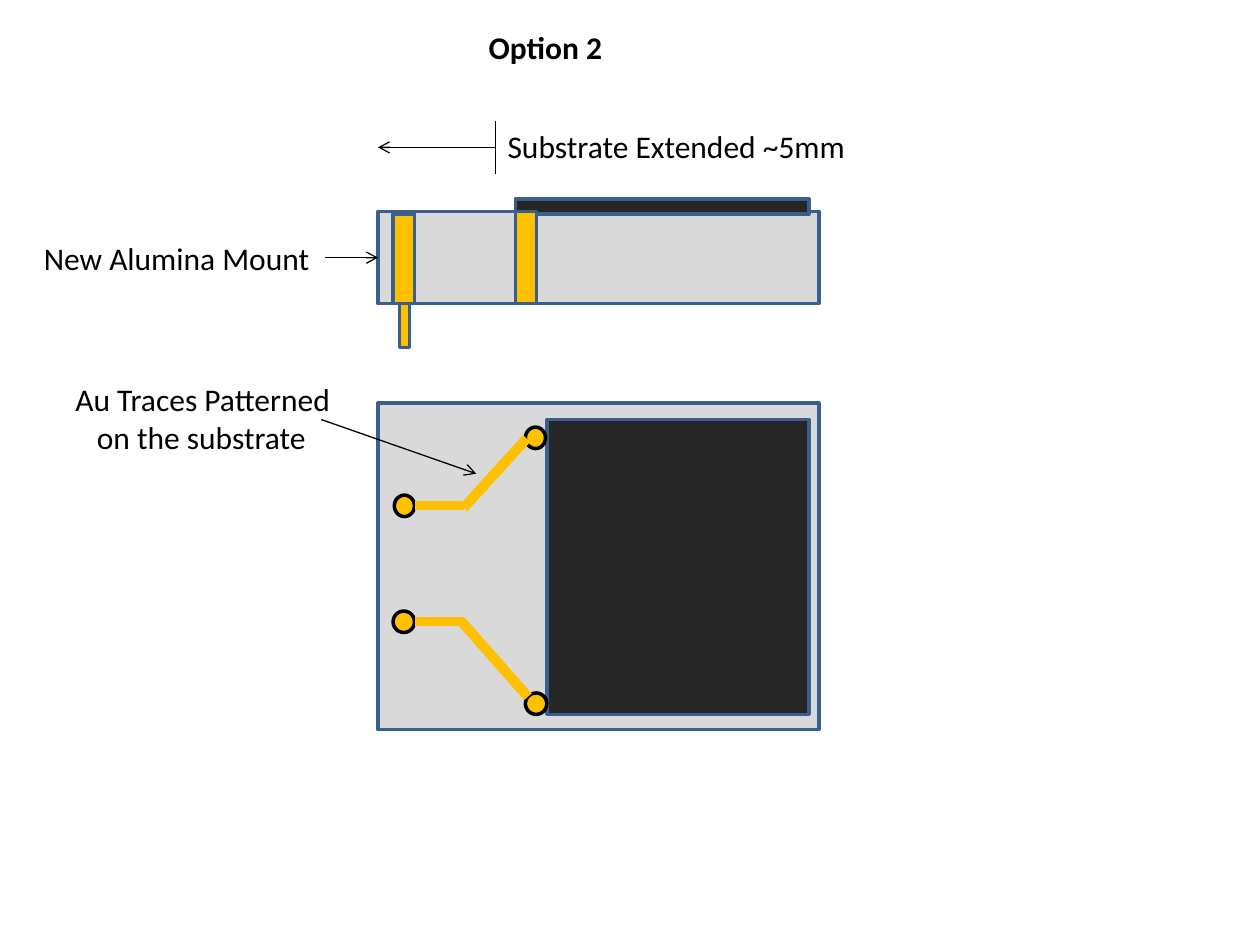
from pptx import Presentation
from pptx.dml.color import RGBColor
from pptx.enum.shapes import MSO_CONNECTOR, MSO_SHAPE
from pptx.enum.text import MSO_AUTO_SIZE, PP_ALIGN
from pptx.oxml.ns import qn
from pptx.util import Inches, Pt
from lxml import etree

RECTANGLE = MSO_SHAPE.RECTANGLE
OVAL = MSO_SHAPE.OVAL
STRAIGHT = MSO_CONNECTOR.STRAIGHT
LEFT = PP_ALIGN.LEFT
COLORS = {
    "alumina": "D9D9D9",
    "chip": "262626",
    "gold": "FFC000",
    "outline": "3A5F8C",
    "black": "000000",
}

presentation = Presentation()
presentation.slide_width = Inches(10)
presentation.slide_height = Inches(7.5)
slide = presentation.slides.add_slide(presentation.slide_layouts[6])


def add_text(text, left, top, width, height=0.4, bold=False):
    box = slide.shapes.add_textbox(
        Inches(left), Inches(top), Inches(width), Inches(height))
    frame = box.text_frame
    frame.word_wrap = False
    frame.auto_size = MSO_AUTO_SIZE.SHAPE_TO_FIT_TEXT
    frame.text = text
    for paragraph in frame.paragraphs:
        paragraph.alignment = LEFT
        font = paragraph.runs[0].font
        font.name = "Calibri"
        font.size = Pt(18)
        font.bold = bold
        font.color.rgb = RGBColor.from_string(COLORS["black"])
    return box


def add_line(x1, y1, x2, y2, color="black", width=0.75, arrow=False):
    connector = slide.shapes.add_connector(
        STRAIGHT, Inches(x1), Inches(y1), Inches(x2), Inches(y2))
    connector.line.color.rgb = RGBColor.from_string(COLORS[color])
    connector.line.width = Pt(width)
    if arrow:
        line = connector.line._get_or_add_ln()
        etree.SubElement(line, qn("a:tailEnd"), type="arrow")
    etree.SubElement(connector._element.spPr, qn("a:effectLst"))
    return connector


parts = {
    "side mount": (RECTANGLE, 3, 1.68, 3.5, 0.73, "alumina", "outline"),
    "side chip": (RECTANGLE, 4.09, 1.58, 2.33, 0.12, "chip", "outline"),
    "inner via": (RECTANGLE, 4.09, 1.68, 0.17, 0.73, "gold", "outline"),
    "pin": (RECTANGLE, 3.17, 2.41, 0.08, 0.35, "gold", "outline"),
    "top mount": (RECTANGLE, 3, 3.2, 3.5, 2.59, "alumina", "outline"),
    "top chip": (RECTANGLE, 4.34, 3.33, 2.08, 2.34, "chip", "outline"),
    "lower chip pad": (OVAL, 4.17, 5.5, 0.17, 0.17, "gold", "black"),
    "upper chip pad": (OVAL, 4.17, 3.39, 0.16, 0.17, "gold", "black"),
    "outer via": (RECTANGLE, 3.12, 1.7, 0.17, 0.71, "gold", "outline"),
    "lower edge pad": (OVAL, 3.12, 4.85, 0.17, 0.17, "gold", "black"),
    "upper edge pad": (OVAL, 3.13, 3.93, 0.16, 0.17, "gold", "black"),
}
shapes = {}
for part, (kind, left, top, width, height, fill, outline) in parts.items():
    shape = slide.shapes.add_shape(
        kind, Inches(left), Inches(top), Inches(width), Inches(height))
    shape.shadow.inherit = False
    shape.fill.solid()
    shape.fill.fore_color.rgb = RGBColor.from_string(COLORS[fill])
    shape.line.color.rgb = RGBColor.from_string(COLORS[outline])
    shape.line.width = Pt(2)
    shapes[part] = shape

traces = [
    (4.18, 3.48, 3.68, 4.03, 5.75),
    (3.29, 4.01, 3.68, 4.01, 5.25),
    (3.29, 4.93, 3.68, 4.93, 5.25),
    (4.19, 5.53, 3.66, 4.93, 5.75),
]
for x1, y1, x2, y2, width in traces:
    add_line(x1, y1, x2, y2, color="gold", width=width)

add_text("Option 2", 3.78, 0.17, 1.11, bold=True)

mount_label = add_text("New Alumina Mount", 0.25, 1.85, 2.33, 0.39)
mount_arrow = add_line(2.58, 2.05, 3, 2.05, arrow=True)
mount_arrow.begin_connect(mount_label, 3)
mount_arrow.end_connect(shapes["side mount"], 1)

add_line(3.93, 1.17, 3, 1.17, arrow=True)
add_line(3.93, 1.38, 3.93, 0.96)
add_text("Substrate Extended ~5mm", 3.93, 0.96, 2.91)

trace_label = add_text("Au Traces Patterned\non the substrate", 0.5, 2.97, 2.31, 0.71)
second_line = trace_label.text_frame.paragraphs[1]
second_line._p.get_or_add_pPr().set("marL", str(Inches(0.17)))
add_line(2.55, 3.33, 3.78, 3.76, arrow=True)

presentation.save("out.pptx")
